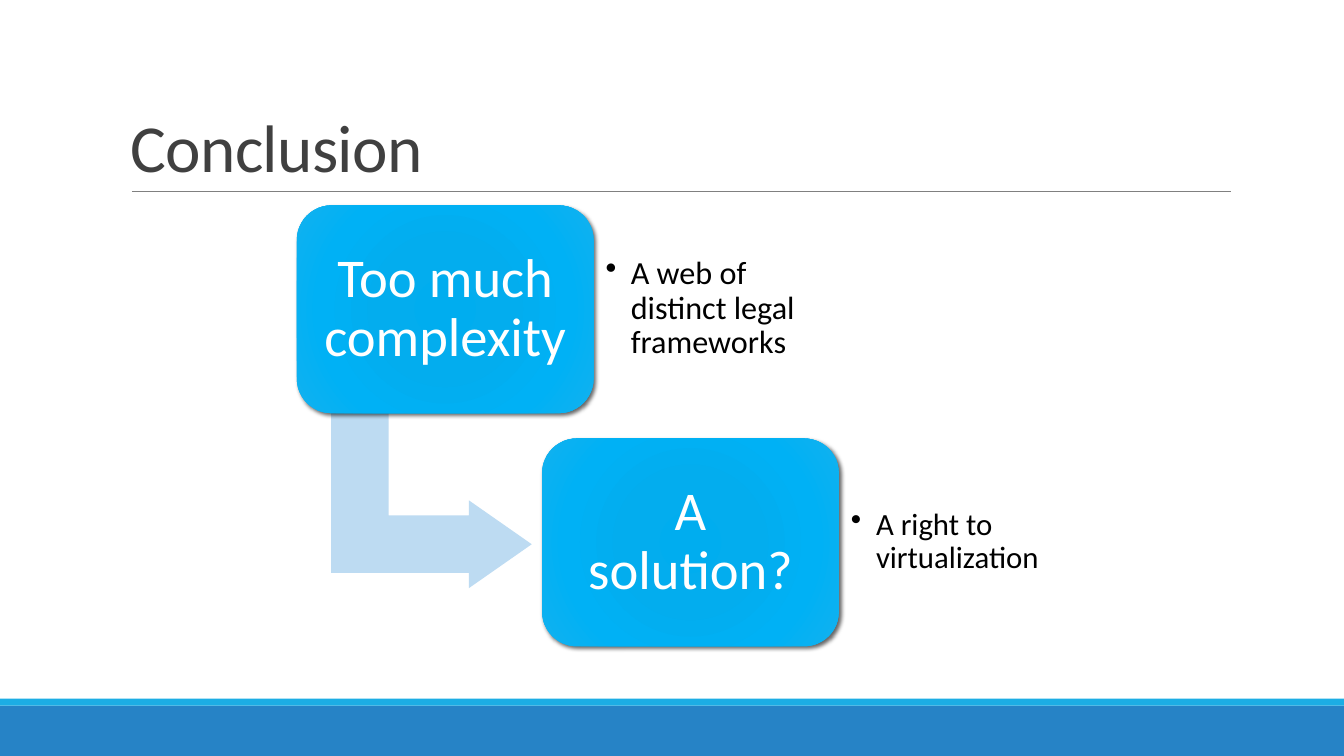
import pptx
import pptx.dml.color
import pptx.enum.shapes
import pptx.enum.text
import pptx.oxml
import pptx.oxml.ns
import pptx.util

Pt = pptx.util.Pt
RGB = pptx.dml.color.RGBColor.from_string
SHAPE = pptx.enum.shapes.MSO_SHAPE
ALIGN = pptx.enum.text.PP_ALIGN
ANCHOR = pptx.enum.text.MSO_ANCHOR
qn = pptx.oxml.ns.qn
NS = pptx.oxml.ns.nsdecls("a")

THEME = {
    "font": "Calibri",
    "title": {"color": "404040", "size": 48},
    "card": {"color": "FFFFFF", "size": 39},
    "note": {"color": "000000"},
    "rule": "808080",
    "footer": "2683C6",
    "stripe": "1CADE4",
    "arrow": "BDDBF2",
    "shadow": "000000",
    "gradient": [(0, "00ADEF"), (34, "03ADEE"), (70, "00B1F5"), (100, "12B1EE")],
}

prs = pptx.Presentation()
prs.slide_width, prs.slide_height = Pt(960), Pt(540)
s = prs.slides.add_slide(prs.slide_layouts[6])


def add_shape(kind, x, y, w, h, color):
    sp = s.shapes.add_shape(kind, Pt(x), Pt(y), Pt(w), Pt(h))
    sp.shadow.inherit = False
    sp.fill.solid()
    sp.fill.fore_color.rgb = RGB(color)
    sp.line.fill.background()
    return sp


def set_text(sp, text, size, color, spacing, frame, align=ALIGN.LEFT):
    tf = sp.text_frame
    for name, value in {"word_wrap": True, **frame}.items():
        setattr(tf, name, value)
    p = tf.paragraphs[0]
    p.line_spacing, p.alignment = spacing, align
    r = p.add_run()
    r.text = text
    for name, value in {"name": THEME["font"], "size": Pt(size)}.items():
        setattr(r.font, name, value)
    r.font.color.rgb = RGB(color)
    return p


# Footer bands
add_shape(SHAPE.RECTANGLE, 0, 504, 960, 36, THEME["footer"])
add_shape(SHAPE.RECTANGLE, 0, 499, 960, 5, THEME["stripe"])

# Title and rule
rule = s.shapes.add_connector(pptx.enum.shapes.MSO_CONNECTOR.STRAIGHT,
                              Pt(94.3), Pt(136.8), Pt(879), Pt(136.8))
rule.line.color.rgb = RGB(THEME["rule"])
rule.line.width = Pt(0.5)
rule._element.spPr.append(pptx.oxml.parse_xml(f"<a:effectLst {NS}/>"))
title = s.shapes.add_textbox(Pt(86.4), Pt(22.3), Pt(792), Pt(114.5))
p = set_text(title, "Conclusion", THEME["title"]["size"], THEME["title"]["color"], 0.85,
             {"vertical_anchor": ANCHOR.BOTTOM})
p.runs[0].font._element.set("spc", "-50")

# Bent arrow from the first step to the second
arrow = add_shape(SHAPE.BENT_UP_ARROW, 245.5, 285.8, 125.3, 143.3, THEME["arrow"])
arrow.rotation = 90
for i, value in enumerate((0.328, 0.25, 0.358)):
    arrow.adjustments[i] = value

# Steps: a card with a bulleted note at its right
stops = "".join(f'<a:gs pos="{pos * 1000}"><a:srgbClr val="{color}"/></a:gs>'
                for pos, color in THEME["gradient"])
GRADIENT = (f'<a:gradFill {NS} rotWithShape="1"><a:gsLst>{stops}</a:gsLst><a:path path="circle">'
            '<a:fillToRect l="100000" t="100000" r="100000" b="100000"/></a:path></a:gradFill>')
SHADOW = (f'<a:outerShdw {NS} blurRad="{Pt(3)}" dist="{Pt(2)}" dir="2700000" algn="ctr" rotWithShape="0">'
          f'<a:srgbClr val="{THEME["shadow"]}"><a:alpha val="60000"/></a:srgbClr></a:outerShdw>')
CARD_W, CARD_H, NOTE_W, NOTE_H = 212, 148.4, 154, 119.8
X, Y, STEP_X, STEP_Y = 212, 146.7, 175.2, 166.5
SIDES = ("margin_left", "margin_top", "margin_right", "margin_bottom")

steps = [
    ("Too much complexity", "A web of distinct legal frameworks", 23),
    ("A solution?", "A right to virtualization", 22),
]
for i, (heading, note, note_size) in enumerate(steps):
    x, y = X + i * STEP_X, Y + i * STEP_Y
    card = add_shape(SHAPE.ROUNDED_RECTANGLE, x, y, CARD_W, CARD_H, THEME["arrow"])
    spPr = card._element.spPr
    spPr.replace(spPr.find(qn("a:solidFill")), pptx.oxml.parse_xml(GRADIENT))
    spPr.find(qn("a:effectLst")).append(pptx.oxml.parse_xml(SHADOW))
    set_text(card, heading, THEME["card"]["size"], THEME["card"]["color"], 0.9,
             {"vertical_anchor": ANCHOR.MIDDLE, **dict.fromkeys(SIDES, Pt(11.5))}, ALIGN.CENTER)

    box = s.shapes.add_textbox(Pt(x + CARD_W), Pt(y + 14), Pt(NOTE_W), Pt(NOTE_H))
    p = set_text(box, note, note_size, THEME["note"]["color"], 0.9,
                 {"vertical_anchor": ANCHOR.MIDDLE, **dict.fromkeys(SIDES, Pt(8.6))})
    pPr = p._p.get_or_add_pPr()
    pPr.set("marL", str(Pt(18)))
    pPr.set("indent", str(-Pt(18)))
    pPr.append(pptx.oxml.parse_xml(f'<a:buChar {NS} char="•"/>'))

prs.save("out.pptx")
